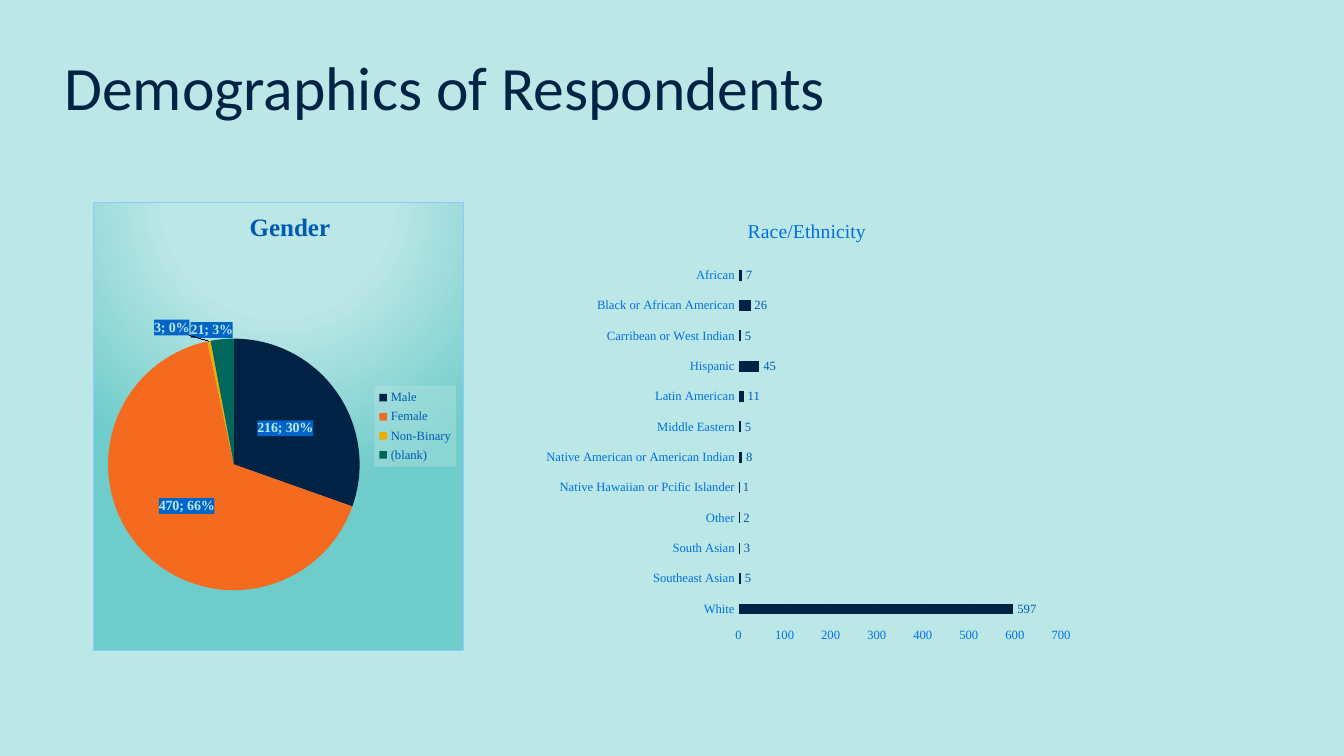
import pptx
import pptx.chart.data
import pptx.dml.color
import pptx.enum.chart
import pptx.enum.text
import pptx.oxml
import pptx.oxml.ns
import pptx.util
from pptx.util import Inches

THEME = {
    "bg": "BBE7E6", "navy": "002244", "orange": "F46A1F", "gold": "F0AB00",
    "green": "00685B", "teal": "6ECCCA", "blue": "0059B2", "bright": "006FDF",
    "label": "0064C8", "border": "91C8FF", "grid": "BDDEFF",
    "sans": "Calibri", "serif": "Times New Roman",
    "title": 44, "gender": 18, "race": 14, "body": 10, "small": 9,
}
NS = pptx.oxml.ns.nsdecls("c", "a")
rgb = pptx.dml.color.RGBColor.from_string
Pos = pptx.enum.chart.XL_LABEL_POSITION


def write(tf, text, size, color, font, bold=False):
    p = tf.paragraphs[0]
    r = p.add_run()
    r.text = text
    r.font.size = pptx.util.Pt(size)
    r.font.name = font
    r.font.bold = bold
    r.font.color.rgb = rgb(color)


def place(el, index, **box):
    for old in el.xpath("./c:layout"):
        el.remove(old)
    modes = '<c:layoutTarget val="inner"/>' if el.tag.endswith("plotArea") else ""
    if not el.tag.endswith("dLbl"):
        modes += '<c:xMode val="edge"/><c:yMode val="edge"/>'
    values = "".join(f'<c:{k} val="{v}"/>' for k, v in box.items())
    el.insert(index, pptx.oxml.parse_xml(
        f"<c:layout {NS}><c:manualLayout>{modes}{values}</c:manualLayout></c:layout>"))


prs = pptx.Presentation()
prs.slide_width, prs.slide_height = Inches(13.33), Inches(7.5)
s = prs.slides.add_slide(prs.slide_layouts[6])
s.background.fill.solid()
s.background.fill.fore_color.rgb = rgb(THEME["bg"])

tf = s.shapes.add_textbox(Inches(0.54), Inches(0.17), Inches(11.5), Inches(1.45)).text_frame
tf.word_wrap = True
tf.vertical_anchor = pptx.enum.text.MSO_ANCHOR.MIDDLE
tf.paragraphs[0].line_spacing = 0.9
write(tf, "Demographics of Respondents", THEME["title"], THEME["navy"], THEME["sans"])

genders = {"Male": 216, "Female": 470, "Non-Binary": 3, "(blank)": 21}
races = {
    "White": 597, "Southeast Asian": 5, "South Asian": 3, "Other": 2,
    "Native Hawaiian or Pcific Islander": 1, "Native American or American Indian": 8,
    "Middle Eastern": 5, "Latin American": 11, "Hispanic": 45,
    "Carribean or West Indian": 5, "Black or African American": 26, "African": 7,
}
gradient = f'''<c:spPr {NS}><a:gradFill><a:gsLst>
<a:gs pos="0"><a:srgbClr val="{THEME['bg']}"/></a:gs>
<a:gs pos="39000"><a:srgbClr val="{THEME['bg']}"/></a:gs>
<a:gs pos="100000"><a:srgbClr val="{THEME['teal']}"/></a:gs></a:gsLst>
<a:path path="circle"><a:fillToRect l="50000" t="-80000" r="50000" b="180000"/></a:path></a:gradFill>
<a:ln w="9525"><a:solidFill><a:srgbClr val="{THEME['border']}"/></a:solidFill></a:ln></c:spPr>'''
clear = f"<c:spPr {NS}><a:noFill/><a:ln><a:noFill/></a:ln></c:spPr>"

Kind = pptx.enum.chart.XL_CHART_TYPE
specs = [
    (Kind.PIE, 0.92, 3.68, genders, gradient,
     ("Gender", THEME["gender"], THEME["blue"], THEME["serif"], True),
     dict(x=0.41, y=0.01), dict(x=0.04, y=0.3, w=0.68, h=0.57)),
    (Kind.BAR_CLUSTERED, 5.32, 5.42, races, clear,
     ("Race/Ethnicity", THEME["race"], THEME["bright"], THEME["serif"], False),
     dict(x=0.38, y=0.03), dict(x=0.37, y=0.13, w=0.59, h=0.81)),
]
charts = []
for kind, left, width, values, area, heading, heading_at, plot_at in specs:
    data = pptx.chart.data.CategoryChartData()
    data.categories = list(values)
    data.add_series("Series 1", list(values.values()))
    ch = s.shapes.add_chart(kind, Inches(left), Inches(2), Inches(width), Inches(4.46), data).chart
    ch.font.size = pptx.util.Pt(THEME["body"])
    ch.font.name = THEME["serif"]
    ch.font.color.rgb = rgb(THEME["navy"])
    ch.has_title = True
    write(ch.chart_title.text_frame, *heading)
    place(ch.element.xpath("./c:chart/c:title")[0], 1, **heading_at)
    place(ch.element.xpath("./c:chart/c:plotArea")[0], 0, **plot_at)
    ch.element.xpath("./c:chart")[0].addnext(pptx.oxml.parse_xml(area))
    charts.append(ch)
pie, bar = charts

pie.plots[0].vary_by_categories = True
pie.has_legend = True
pie.legend.position = pptx.enum.chart.XL_LEGEND_POSITION.RIGHT
pie.legend.include_in_layout = False
pie.legend.font.size = pptx.util.Pt(THEME["small"])
pie.legend.font.name = THEME["serif"]
pie.legend.font.color.rgb = rgb(THEME["blue"])
legend = pie.element.xpath(".//c:legend")[0]
place(legend, 1, x=0.76, y=0.41, w=0.22, h=0.18)
legend.xpath("./c:txPr")[0].addprevious(pptx.oxml.parse_xml(
    f'<c:spPr {NS}><a:solidFill><a:srgbClr val="{THEME["bg"]}">'
    '<a:alpha val="39000"/></a:srgbClr></a:solidFill></c:spPr>'))

slices = pie.plots[0].series[0]
for i, color in enumerate(("navy", "orange", "gold", "green")):
    fill = slices.points[i].format.fill
    fill.solid()
    fill.fore_color.rgb = rgb(THEME[color])
labels = slices.data_labels
labels.show_value = labels.show_percentage = True
small_slices = [slices.points[i].data_label for i in (2, 3)]
for lbl, pos in [(labels, Pos.CENTER)] + [(d, Pos.OUTSIDE_END) for d in small_slices]:
    lbl.position = pos
    lbl.font.size = pptx.util.Pt(THEME["body"])
    lbl.font.bold = True
    lbl.font.name = THEME["serif"]
    lbl.font.color.rgb = rgb(THEME["bg"])
for el in pie.element.xpath(".//c:ser/c:dLbls | .//c:ser/c:dLbls/c:dLbl"):
    el.xpath("./c:showPercent")[0].set("val", "1")
    el.xpath("./c:txPr")[0].addprevious(pptx.oxml.parse_xml(
        f'<c:spPr {NS}><a:solidFill><a:srgbClr val="{THEME["label"]}"/></a:solidFill></c:spPr>'))
    last = el.xpath("./c:showBubbleSize | ./c:showPercent")[-1]
    last.addnext(pptx.oxml.parse_xml(f"<c:separator {NS}>; </c:separator>"))
for i, x, y in ((2, -0.05, 0), (3, 0.03, 0.01)):
    place(pie.element.xpath(f".//c:dLbl[c:idx/@val='{i}']")[0], 1, x=x, y=y)

bar.has_legend = False
bar.plots[0].gap_width = 182
bar.plots[0].vary_by_categories = False
bars = bar.plots[0].series[0]
bars.format.fill.solid()
bars.format.fill.fore_color.rgb = rgb(THEME["navy"])
bars.data_labels.show_value = True
bars.data_labels.position = Pos.OUTSIDE_END
cat, val = bar.category_axis, bar.value_axis
for part, color in ((bars.data_labels, "blue"), (cat.tick_labels, "bright"), (val.tick_labels, "bright")):
    part.font.size = pptx.util.Pt(THEME["small"])
    part.font.name = THEME["serif"]
    part.font.color.rgb = rgb(THEME[color])
for axis in (cat, val):
    axis.major_tick_mark = axis.minor_tick_mark = pptx.enum.chart.XL_TICK_MARK.NONE
val.minimum_scale, val.maximum_scale, val.major_unit = 0, 700, 100
val.has_major_gridlines = True
val.format.line.fill.background()
for line in (cat.format.line, val.major_gridlines.format.line):
    line.width = pptx.util.Pt(0.75)
    line.color.rgb = rgb(THEME["grid"])
for color in bar.element.xpath(".//c:majorGridlines//a:srgbClr | .//c:catAx/c:spPr//a:srgbClr"):
    color.append(pptx.oxml.parse_xml(f'<a:alpha {NS} val="10000"/>'))

prs.save("out.pptx")
